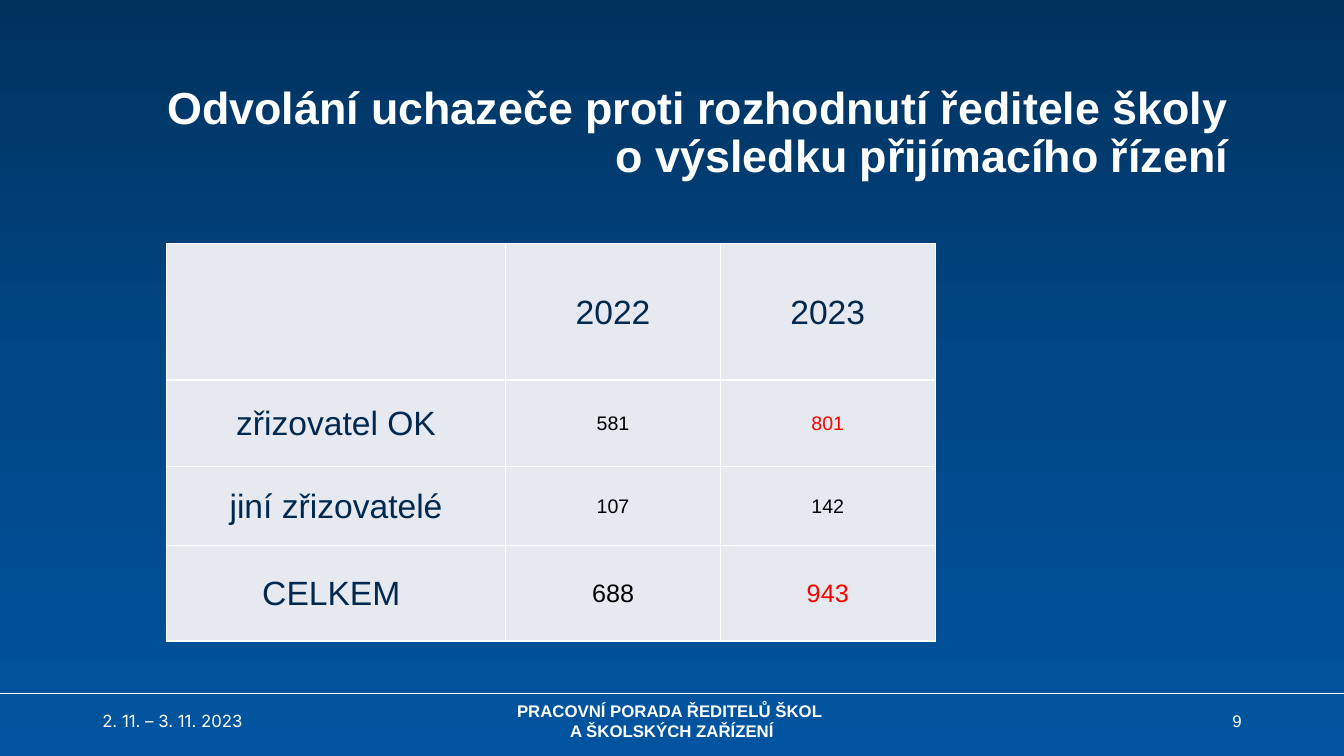
from copy import deepcopy
from dataclasses import dataclass

from lxml.etree import SubElement
from pptx import Presentation
from pptx.dml.color import RGBColor
from pptx.enum.shapes import MSO_CONNECTOR, MSO_SHAPE
from pptx.enum.text import MSO_ANCHOR, PP_ALIGN
from pptx.oxml.ns import qn
from pptx.slide import Slide
from pptx.table import _Cell
from pptx.text.text import TextFrame
from pptx.util import Pt

PAGE_WIDTH, PAGE_HEIGHT = 960, 540
WHITE, NAVY, BLACK, RED, PALE = "FFFFFF", "012950", "000000", "FF0000", "E7E9F0"
FOOTER_TOP, FOOTER_HEIGHT = 500.5, 28.8


@dataclass
class Style:
    size: float
    color: str = WHITE
    bold: bool = False
    font: str = "Arial"
    align: PP_ALIGN = PP_ALIGN.CENTER
    line_spacing: float = 1.0


@dataclass
class Label:
    text: str
    left: float
    top: float
    width: float
    height: float
    style: Style


LABELS = [
    Label("Odvolání uchazeče proti rozhodnutí ředitele školy \vo výsledku přijímacího řízení ",
          66, 49, 828, 93, Style(32, bold=True, align=PP_ALIGN.RIGHT, line_spacing=0.9)),
    Label("2. 11. – 3. 11. 2023", 66, FOOTER_TOP, 216, FOOTER_HEIGHT,
          Style(12, font="Inter", align=PP_ALIGN.LEFT)),
    Label("PRACOVNÍ PORADA ŘEDITELŮ ŠKOL \vA ŠKOLSKÝCH ZAŘÍZENÍ",
          318, FOOTER_TOP, 324, FOOTER_HEIGHT, Style(12, bold=True)),
    Label("9", 678, FOOTER_TOP, 216, FOOTER_HEIGHT, Style(12, align=PP_ALIGN.RIGHT)),
]

HEADING = Style(24, NAVY)
COUNT, COUNT_UP = Style(14, BLACK), Style(14, RED)
TOTAL, TOTAL_UP = Style(18, BLACK), Style(18, RED)
APPEALS = [
    [("", HEADING), ("2022", HEADING), ("2023", HEADING)],
    [("zřizovatel OK", HEADING), ("581", COUNT), ("801", COUNT_UP)],
    [("jiní zřizovatelé", HEADING), ("107", COUNT), ("142", COUNT)],
    [("CELKEM ", HEADING), ("688", TOTAL), ("943", TOTAL_UP)],
]
COLUMN_WIDTHS = [242.4, 153.4, 153.4]
ROW_HEIGHTS = [97.2, 61.9, 56.2, 68.4]


def rgb(value: str) -> RGBColor:
    return RGBColor.from_string(value)


def write(frame: TextFrame, text: str, style: Style) -> None:
    frame.word_wrap = True
    para = frame.paragraphs[0]
    para.text = text
    para.alignment = style.align
    para.line_spacing = style.line_spacing
    for span in para.runs:
        span.font.name = style.font
        span.font.size = Pt(style.size)
        span.font.bold = style.bold
        span.font.color.rgb = rgb(style.color)


def add_background(page: Slide) -> None:
    panel = page.shapes.add_shape(MSO_SHAPE.RECTANGLE, 0, 0, Pt(PAGE_WIDTH), Pt(PAGE_HEIGHT))
    panel.shadow.inherit = False
    panel.line.fill.background()
    panel.fill.gradient()
    panel.fill.gradient_angle = 270
    first = panel.fill._fill._gradFill.gsLst[0]
    first.addnext(deepcopy(first))
    stops = [(0, "00325E"), (0.5, "004786"), (1, "00549F")]
    for stop, (position, color) in zip(panel.fill.gradient_stops, stops):
        stop.position = position
        stop.color.rgb = rgb(color)


def add_footer_rule(page: Slide) -> None:
    rule = page.shapes.add_connector(
        MSO_CONNECTOR.STRAIGHT, 0, Pt(495.4), Pt(PAGE_WIDTH), Pt(495.4))
    rule.line.color.rgb = rgb(WHITE)
    rule.line.width = Pt(1)
    SubElement(rule._element.spPr, qn("a:effectLst"))


def add_label(page: Slide, label: Label) -> None:
    box = page.shapes.add_textbox(
        Pt(label.left), Pt(label.top), Pt(label.width), Pt(label.height))
    box.text_frame.vertical_anchor = MSO_ANCHOR.MIDDLE
    write(box.text_frame, label.text, label.style)


def add_borders(cell: _Cell) -> None:
    properties = cell._tc.get_or_add_tcPr()
    for position, side in enumerate(("a:lnL", "a:lnR", "a:lnT", "a:lnB")):
        border = SubElement(properties, qn(side), w=str(Pt(1)))
        fill = SubElement(border, qn("a:solidFill"))
        SubElement(fill, qn("a:srgbClr"), val=WHITE)
        properties.insert(position, border)


def add_appeals_table(page: Slide) -> None:
    table = page.shapes.add_table(
        len(ROW_HEIGHTS), len(COLUMN_WIDTHS), Pt(118.8), Pt(174.2),
        Pt(sum(COLUMN_WIDTHS)), Pt(sum(ROW_HEIGHTS))).table
    table.first_row = table.horz_banding = False
    for column, width in zip(table.columns, COLUMN_WIDTHS):
        column.width = Pt(width)
    for row, height, entries in zip(table.rows, ROW_HEIGHTS, APPEALS):
        row.height = Pt(height)
        for cell, (text, style) in zip(row.cells, entries):
            cell.margin_left = cell.margin_right = cell.margin_top = Pt(0.7)
            cell.margin_bottom = 0
            cell.vertical_anchor = MSO_ANCHOR.MIDDLE
            cell.fill.solid()
            cell.fill.fore_color.rgb = rgb(PALE)
            add_borders(cell)
            write(cell.text_frame, text, style)


def main() -> None:
    deck = Presentation()
    deck.slide_width, deck.slide_height = Pt(PAGE_WIDTH), Pt(PAGE_HEIGHT)
    page = deck.slides.add_slide(deck.slide_layouts[6])
    add_background(page)
    add_footer_rule(page)
    for label in LABELS:
        add_label(page, label)
    add_appeals_table(page)
    deck.save("out.pptx")


if __name__ == "__main__":
    main()
